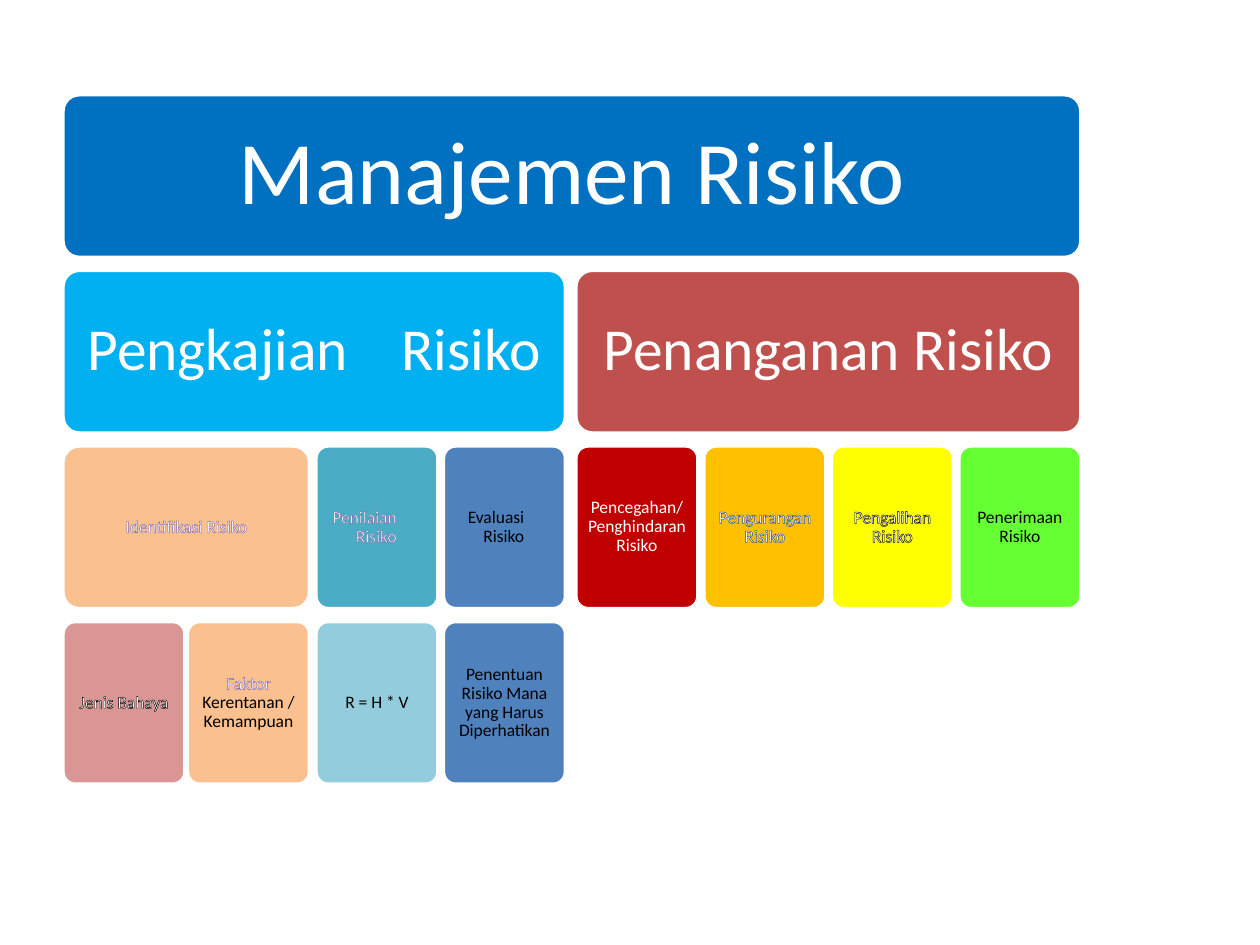
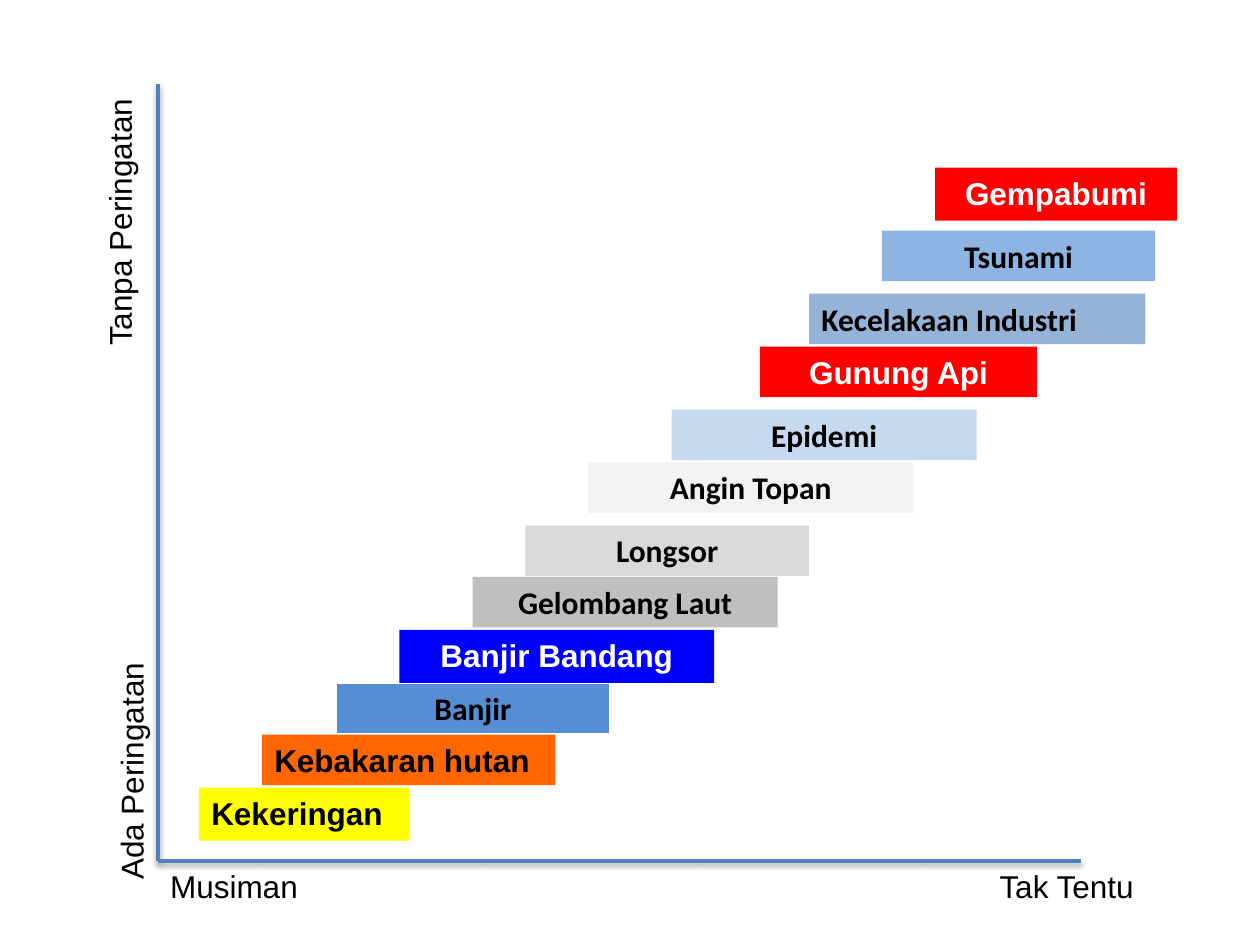
from lxml import etree
from pptx import Presentation
from pptx.dml.color import RGBColor
from pptx.enum.shapes import MSO_CONNECTOR, MSO_SHAPE
from pptx.enum.text import MSO_ANCHOR, MSO_AUTO_SIZE, PP_ALIGN
from pptx.oxml import parse_xml
from pptx.oxml.ns import nsdecls, qn
from pptx.util import Cm, Pt

WHITE = RGBColor(0xFF, 0xFF, 0xFF)
BLACK = RGBColor(0x00, 0x00, 0x00)
BLUE = RGBColor(0x4F, 0x81, 0xBD)
NAVY = RGBColor(0x1F, 0x49, 0x7D)
OCEAN = RGBColor(0x00, 0x70, 0xC0)
CYAN = RGBColor(0x00, 0xB0, 0xF0)
BRICK = RGBColor(0xC0, 0x50, 0x4D)
PEACH = RGBColor(0xFA, 0xC0, 0x90)
ROSE = RGBColor(0xD9, 0x96, 0x94)
TEAL = RGBColor(0x4B, 0xAC, 0xC6)
PALE_TEAL = RGBColor(0x93, 0xCD, 0xDD)
CRIMSON = RGBColor(0xC0, 0x00, 0x00)
AMBER = RGBColor(0xFF, 0xC0, 0x00)
YELLOW = RGBColor(0xFF, 0xFF, 0x00)
LIME = RGBColor(0x66, 0xFF, 0x33)
PURPLE = RGBColor(0x80, 0x64, 0xA2)
ORANGE = RGBColor(0xFF, 0x66, 0x00)
RED = RGBColor(0xFF, 0x00, 0x00)
PURE_BLUE = RGBColor(0x00, 0x00, 0xFF)
RIVER = RGBColor(0x55, 0x8E, 0xD5)
GREY = RGBColor(0xBF, 0xBF, 0xBF)
LIGHT_GREY = RGBColor(0xD9, 0xD9, 0xD9)
MIST = RGBColor(0xF2, 0xF2, 0xF2)
PALE_BLUE = RGBColor(0xC6, 0xD9, 0xF1)
STEEL = RGBColor(0x95, 0xB3, 0xD7)
SKY = RGBColor(0x8E, 0xB4, 0xE3)

COLUMN_LEFTS = (1.27, 3.78, 6.37, 8.94, 11.61, 14.19, 16.76, 19.33)
COLUMN_WIDTH = 2.46
TREE_TOP, ROW_PITCH, ROW_HEIGHT = 1.91, 3.54, 3.28
ROW_FONT_SIZES = (51, 34, 10, 10)
ROW_INSETS = (0.53, 0.36, 0.1, 0.1)
STAGGER_INSET = 0.76

TREE = (
    (0, 0, 7, OCEAN, "Manajemen Risiko", WHITE, None),
    (1, 4, 7, BRICK, "Penanganan Risiko", WHITE, None),
    (2, 0, 1, PEACH, "Identifikasi Risiko", WHITE, PURPLE),
    (2, 4, 4, CRIMSON, "Pencegahan/ Penghindaran Risiko", WHITE, None),
    (2, 5, 5, AMBER, "Pengurangan Risiko", WHITE, NAVY),
    (2, 6, 6, YELLOW, "Pengalihan Risiko", WHITE, BLACK),
    (2, 7, 7, LIME, "Penerimaan Risiko", BLACK, None),
    (3, 0, 0, ROSE, "Jenis Bahaya", WHITE, BLACK),
    (3, 2, 2, PALE_TEAL, "R = H * V", BLACK, None),
    (3, 3, 3, BLUE, "Penentuan Risiko Mana yang Harus Diperhatikan", BLACK, None),
)
STAGGERED = (
    (2, 2, 2, TEAL, "Penilaian Risiko", WHITE, PURPLE),
    (2, 3, 3, BLUE, "Evaluasi Risiko", BLACK, None),
)

AXIS_LEFT, AXIS_TOP, AXIS_BOTTOM, AXIS_RIGHT = 3.18, 1.7, 17.36, 21.8
THIN, THICK = 1.02, 1.07
LEFT, CENTER = PP_ALIGN.LEFT, PP_ALIGN.CENTER
HAZARDS = (
    ("Kekeringan", 4.01, 15.88, 4.24, THICK, YELLOW, BLACK, "Arial", LEFT),
    ("Kebakaran hutan", 5.28, 14.81, 5.92, THIN, ORANGE, BLACK, "Arial", LEFT),
    ("Banjir", 6.78, 13.77, 5.51, THIN, RIVER, BLACK, "Calibri", CENTER),
    ("Banjir Bandang", 8.05, 12.7, 6.35, THICK, PURE_BLUE, WHITE, "Arial", CENTER),
    ("Gelombang Laut", 9.53, 11.63, 6.15, THIN, GREY, BLACK, "Calibri", CENTER),
    ("Longsor", 10.59, 10.59, 5.72, THIN, LIGHT_GREY, BLACK, "Calibri", CENTER),
    ("Angin Topan", 11.86, 9.32, 6.55, THIN, MIST, BLACK, "Calibri", CENTER),
    ("Epidemi", 13.54, 8.26, 6.15, THIN, PALE_BLUE, BLACK, "Calibri", CENTER),
    ("Gunung Api", 15.32, 6.99, 5.59, THIN, RED, WHITE, "Arial", CENTER),
    ("Kecelakaan Industri", 16.31, 5.92, 6.78, THIN, STEEL, BLACK, "Calibri", LEFT),
    ("Tsunami", 17.78, 4.65, 5.51, THIN, SKY, BLACK, "Calibri", CENTER),
    ("Gempabumi", 18.85, 3.38, 4.88, THICK, RED, WHITE, "Arial", CENTER),
)
AXIS_LABELS = (
    ("Musiman", 3.18, 17.36, 3.12, 0, False),
    ("Tak Tentu", 19.9, 17.36, 3.25, 0, False),
    ("Ada Peringatan", -0.43, 14.4, 6.15, 270, True),
    ("Tanpa Peringatan", -0.36, 3.94, 5.54, 270, False),
)


def format_run(run, font_name, size, color, bold=False):
    run.font.name = font_name
    run.font.size = Pt(size)
    run.font.color.rgb = color
    run.font.bold = bold


def outline_run(run, color):
    properties = run._r.get_or_add_rPr()
    properties.insert(0, parse_xml(
        f'<a:ln {nsdecls("a")} w="9525"><a:solidFill>'
        f'<a:srgbClr val="{color}"/></a:solidFill></a:ln>'))


def add_filled(slide, preset, left, top, width, height, fill):
    block = slide.shapes.add_shape(preset, Cm(left), Cm(top), Cm(width), Cm(height))
    block.shadow.inherit = False
    block.fill.solid()
    block.fill.fore_color.rgb = fill
    block.line.fill.background()
    return block


def set_border(block, width):
    block.line.color.rgb = WHITE
    block.line.width = Pt(width)


def add_node(slide, row, first, last, fill, parts):
    left = COLUMN_LEFTS[first]
    width = COLUMN_LEFTS[last] + COLUMN_WIDTH - left
    node = add_filled(slide, MSO_SHAPE.ROUNDED_RECTANGLE, left,
                      TREE_TOP + row * ROW_PITCH, width, ROW_HEIGHT, fill)
    node.adjustments[0] = 0.1
    set_border(node, 2)
    frame = node.text_frame
    frame.word_wrap = True
    frame.vertical_anchor = MSO_ANCHOR.MIDDLE
    inset = Cm(ROW_INSETS[row])
    frame.margin_left = frame.margin_right = inset
    frame.margin_top = frame.margin_bottom = inset
    paragraph = frame.paragraphs[0]
    paragraph.alignment = CENTER
    paragraph.line_spacing = 0.9
    for text, color, outline in parts:
        run = paragraph.add_run()
        run.text = text
        format_run(run, "Calibri", ROW_FONT_SIZES[row], color)
        if outline is not None:
            outline_run(run, outline)
    return node


def add_hazard(slide, name, left, top, width, height, fill, color, font_name, alignment):
    bar = add_filled(slide, MSO_SHAPE.RECTANGLE, left, top, width, height, fill)
    frame = bar.text_frame
    frame.text = name
    frame.word_wrap = True
    frame.vertical_anchor = MSO_ANCHOR.TOP
    frame.auto_size = MSO_AUTO_SIZE.SHAPE_TO_FIT_TEXT
    frame.paragraphs[0].alignment = alignment
    format_run(frame.paragraphs[0].runs[0], font_name, 18, color, True)
    return bar


def add_axis_label(slide, text, left, top, width, rotation, wrap):
    label = slide.shapes.add_textbox(Cm(left), Cm(top), Cm(width), Cm(THIN))
    label.rotation = rotation
    frame = label.text_frame
    frame.text = text
    frame.word_wrap = wrap
    frame.auto_size = MSO_AUTO_SIZE.SHAPE_TO_FIT_TEXT
    format_run(frame.paragraphs[0].runs[0], "Arial", 18, BLACK)


def add_axis(slide, x1, y1, x2, y2):
    axis = slide.shapes.add_connector(
        MSO_CONNECTOR.STRAIGHT, Cm(x1), Cm(y1), Cm(x2), Cm(y2))
    axis.line.color.rgb = BLUE
    axis.line.width = Pt(2)
    effects = etree.SubElement(axis._element.spPr, qn("a:effectLst"))
    shadow = etree.SubElement(effects, qn("a:outerShdw"), blurRad="40000",
                              dist="20000", dir="5400000", rotWithShape="0")
    shade = etree.SubElement(shadow, qn("a:srgbClr"), val=str(BLACK))
    etree.SubElement(shade, qn("a:alpha"), val="38000")


def build_risk_tree(slide):
    for row, first, last, fill, text, color, outline in TREE:
        add_node(slide, row, first, last, fill, [(text, color, outline)])
    for row, first, last, fill, text, color, outline in STAGGERED:
        step = add_node(slide, row, first, last, fill, [(text, color, outline)])
        step.text_frame.margin_right = Cm(STAGGER_INSET)
        step.text_frame.paragraphs[0].alignment = PP_ALIGN.RIGHT
    assessment = add_node(slide, 1, 0, 3, CYAN, [
        ("Pengkajian", WHITE, None), (" ", WHITE, None), ("Risiko", WHITE, None)])
    word_gap = assessment.text_frame.paragraphs[0].runs[1]
    word_gap._r.get_or_add_rPr().set("spc", "2300")
    add_node(slide, 3, 1, 1, PEACH, [
        ("Faktor ", WHITE, PURPLE), ("Kerentanan / Kemampuan", BLACK, None)])


def build_hazard_chart(slide):
    add_axis(slide, AXIS_LEFT, AXIS_TOP, AXIS_LEFT, AXIS_BOTTOM)
    add_axis(slide, AXIS_LEFT, AXIS_BOTTOM, AXIS_RIGHT, AXIS_BOTTOM)
    for label in AXIS_LABELS:
        add_axis_label(slide, *label)
    bars = {hazard[0]: add_hazard(slide, *hazard) for hazard in HAZARDS}
    set_border(bars["Banjir"], 0.75)


def main():
    deck = Presentation()
    deck.slide_width, deck.slide_height = Cm(25.4), Cm(19.05)
    blank = deck.slide_layouts[6]
    build_risk_tree(deck.slides.add_slide(blank))
    build_hazard_chart(deck.slides.add_slide(blank))
    deck.save("out.pptx")


if __name__ == "__main__":
    main()
